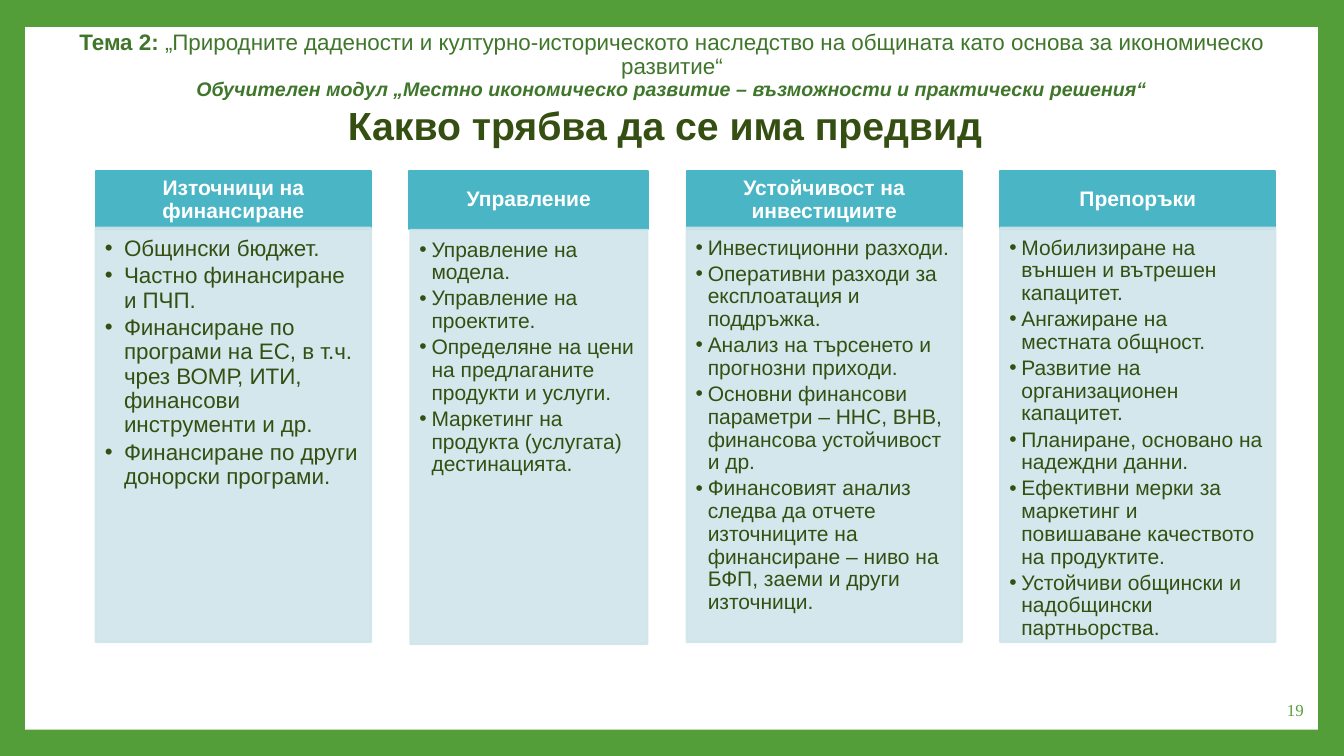
from lxml import etree
from pptx import Presentation
from pptx.dml.color import RGBColor
from pptx.enum.shapes import MSO_SHAPE
from pptx.enum.text import MSO_ANCHOR, MSO_AUTO_SIZE, PP_ALIGN
from pptx.oxml.ns import qn
from pptx.util import Inches, Pt

RECTANGLE = MSO_SHAPE.RECTANGLE
TOP, MIDDLE = MSO_ANCHOR.TOP, MSO_ANCHOR.MIDDLE
LEFT, CENTER, RIGHT = PP_ALIGN.LEFT, PP_ALIGN.CENTER, PP_ALIGN.RIGHT
NO_AUTOFIT = MSO_AUTO_SIZE.NONE

GREEN, MODULE_GREEN, DARK_GREEN = "549E39", "3F762B", "354F12"
TEAL, PALE_TEAL, WHITE = "4AB5C4", "D0E5EA", "FFFFFF"

HEADER_TOP, HEADER_HEIGHT, BODY_HEIGHT = 1.7, 0.57, 4.11
HEADER_INSETS = (0.12, 0.07, 0.12, 0.07)
BODY_INSETS = (0.09, 0.09, 0.12, 0.13)

# Header (left, width), body (left, top, width), text size, hanging indent, heading, items
COLUMNS = [
    ((0.95, 2.73), (0.95, 2.26, 2.73), 16, 0.19, "Източници на финансиране", [
        "Общински бюджет.",
        "Частно финансиране и ПЧП.",
        "Финансиране по програми на ЕС, в т.ч. чрез ВОМР, ИТИ, финансови инструменти и др.",
        "Финансиране по други донорски програми.",
    ]),
    ((4.06, 2.37), (4.07, 2.28, 2.35), 15, 0.12, "Управление", [
        "Управление на модела.",
        "Управление на проектите.",
        "Определяне на цени на предлаганите продукти и услуги.",
        "Маркетинг на продукта (услугата) дестинацията.",
    ]),
    ((6.81, 2.73), (6.81, 2.26, 2.73), 15, 0.12, "Устойчивост на инвестициите", [
        "Инвестиционни разходи.",
        "Оперативни разходи за експлоатация и поддръжка.",
        "Анализ на търсенето и прогнозни приходи.",
        "Основни финансови параметри – ННС, ВНВ, финансова устойчивост и др.",
        "Финансовият анализ следва да отчете източниците на финансиране – "
        "ниво на БФП, заеми и други източници.",
    ]),
    ((9.92, 2.73), (9.92, 2.26, 2.73), 15, 0.12, "Препоръки", [
        "Мобилизиране на външен и вътрешен капацитет.",
        "Ангажиране на местната общност.",
        "Развитие на организационен капацитет.",
        "Планиране, основано на надеждни данни.",
        "Ефективни мерки за маркетинг и повишаване качеството на продуктите.",
        "Устойчиви общински и надобщински партньорства.",
    ]),
]


def color(hex_text):
    return RGBColor.from_string(hex_text)


def set_alpha(color_format_owner, percent):
    """Make every solid colour below the given shape properties translucent."""
    for solid_color in color_format_owner.iter(qn("a:srgbClr")):
        etree.SubElement(solid_color, qn("a:alpha")).set("val", str(percent * 1000))


def add_rectangle(slide, left, top, width, height, fill, outlined=True, opacity=100):
    shape = slide.shapes.add_shape(
        RECTANGLE, Inches(left), Inches(top), Inches(width), Inches(height))
    shape.shadow.inherit = False
    shape.fill.solid()
    shape.fill.fore_color.rgb = color(fill)
    if outlined:
        shape.line.color.rgb = color(fill)
        shape.line.width = Pt(1.5)
    else:
        shape.line.fill.background()
    if opacity < 100:
        set_alpha(shape.element.spPr, opacity)
    return shape


def add_text_box(slide, left, top, width, height):
    return slide.shapes.add_textbox(
        Inches(left), Inches(top), Inches(width), Inches(height))


def add_bullet(paragraph, indent):
    properties = paragraph._p.get_or_add_pPr()
    properties.set("marL", str(Inches(indent)))
    properties.set("indent", str(-Inches(indent)))
    etree.SubElement(properties, qn("a:buFont")).set("typeface", "Arial")
    etree.SubElement(properties, qn("a:buChar")).set("char", "•")


def write(shape, paragraphs, size, text_color, font="Arial", bold=False, align=LEFT,
          anchor=TOP, insets=(0.1, 0.05, 0.1, 0.05), line_spacing=1.0,
          space_after=0, bullet_indent=None):
    """Fill a shape; a paragraph is a string or a list of (text, font overrides)."""
    frame = shape.text_frame
    frame.word_wrap = True
    frame.auto_size = NO_AUTOFIT
    frame.vertical_anchor = anchor
    (frame.margin_left, frame.margin_top,
     frame.margin_right, frame.margin_bottom) = map(Inches, insets)
    for index, content in enumerate(paragraphs):
        paragraph = frame.add_paragraph() if index else frame.paragraphs[0]
        paragraph.alignment = align
        paragraph.line_spacing = line_spacing
        paragraph.space_before = Pt(0)
        paragraph.space_after = Pt(space_after)
        if bullet_indent:
            add_bullet(paragraph, bullet_indent)
        runs = [(content, {})] if isinstance(content, str) else content
        for text, overrides in runs:
            run = paragraph.add_run()
            run.text = text
            run.font.name = font
            run.font.color.rgb = color(text_color)
            run.font.size = Pt(overrides.get("size", size))
            run.font.bold = overrides.get("bold", bold)
            run.font.italic = overrides.get("italic", False)


def add_column(slide, header_place, body_place, size, indent, heading, items):
    header_left, header_width = header_place
    header = add_rectangle(
        slide, header_left, HEADER_TOP, header_width, HEADER_HEIGHT, TEAL)
    write(header, [heading], 15, WHITE, bold=True, align=CENTER, anchor=MIDDLE,
          insets=HEADER_INSETS, line_spacing=0.9)
    body = add_rectangle(slide, *body_place, BODY_HEIGHT, PALE_TEAL, opacity=90)
    write(body, items, size, DARK_GREEN, insets=BODY_INSETS, line_spacing=0.9,
          space_after=2.5, bullet_indent=indent)


def place_title(slide, text):
    title = slide.shapes.title
    title.left, title.top = Inches(1.28), Inches(0.95)
    title.width, title.height = Inches(10.63), Inches(0.57)
    write(title, [text], 28, DARK_GREEN, bold=True, align=CENTER)


def main():
    presentation = Presentation()
    presentation.slide_width, presentation.slide_height = Inches(13.33), Inches(7.5)
    slide = presentation.slides.add_slide(presentation.slide_layouts[5])
    slide.background.fill.solid()
    slide.background.fill.fore_color.rgb = color(GREEN)

    panel = add_rectangle(slide, 0.25, 0.27, 12.82, 6.97, WHITE, outlined=False)
    slide.shapes.title.element.addprevious(panel.element)
    place_title(slide, "Какво трябва да се има предвид")

    for column in COLUMNS:
        add_column(slide, *column)

    write(add_text_box(slide, 0.37, 0.31, 12.59, 0.68), [
        [("Тема 2: ", {"bold": True}),
         ("„Природните дадености и културно-историческото наследство на общината "
          "като основа за икономическо развитие“", {})],
        [("Обучителен модул „Местно икономическо развитие – възможности и "
          "практически решения“", {"size": 14, "bold": True, "italic": True})],
    ], 16, MODULE_GREEN, align=CENTER, anchor=MIDDLE, line_spacing=0.9)
    write(add_text_box(slide, 11.16, 6.84, 1.87, 0.4), ["19"], 12, GREEN,
          font="Times New Roman", align=RIGHT, anchor=MIDDLE)

    presentation.save("out.pptx")


if __name__ == "__main__":
    main()
